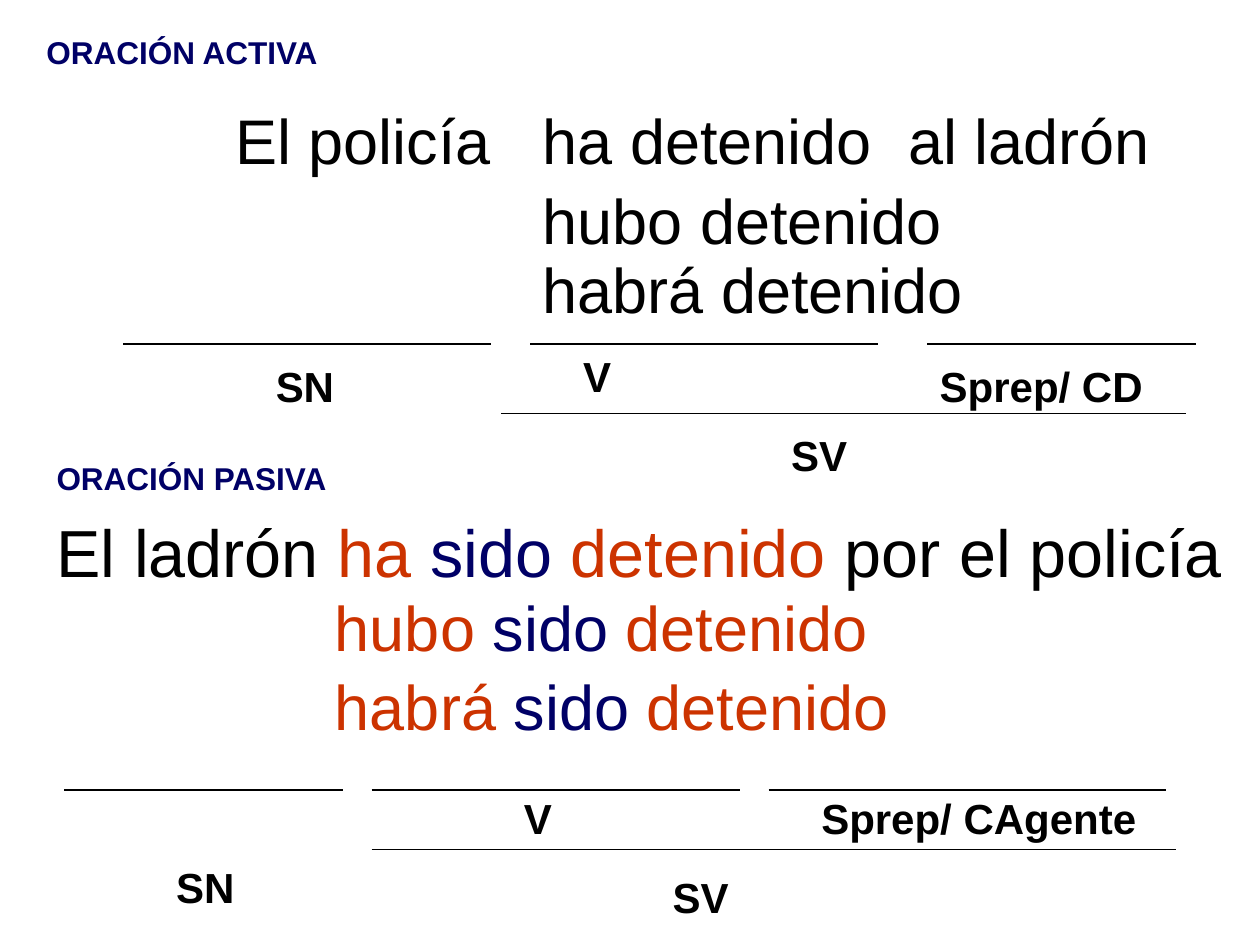
from lxml import etree
from pptx import Presentation
from pptx.dml.color import RGBColor
from pptx.enum.shapes import MSO_CONNECTOR as Conn
from pptx.oxml.ns import qn
from pptx.util import Inches, Pt

BLACK = RGBColor(0x00, 0x00, 0x00)
NAVY = RGBColor(0x00, 0x00, 0x66)
RUST = RGBColor(0xCC, 0x33, 0x00)
COLS, ROWS = 100, 75  # slide grid


def write(tf, runs, size=36, bold=False, font="Arial"):
    """Fill the first paragraph with (text, colour) runs."""
    p = tf.paragraphs[0]
    for text, color in runs:
        r = p.add_run()
        r.text = text
        r.font.name, r.font.size, r.font.bold = font, Pt(size), bold
        r.font.color.rgb = color
    return p


class Board:
    def __init__(self, prs):
        self.s = prs.slides.add_slide(prs.slide_layouts[6])
        self.col = prs.slide_width / COLS
        self.row = prs.slide_height / ROWS

    def x(self, cols):
        return round(cols * self.col)

    def y(self, rows):
        return round(rows * self.row)

    def text(self, x, y, w, h, runs, **fmt):
        sp = self.s.shapes.add_textbox(self.x(x), self.y(y), self.x(w), self.y(h))
        sp.text_frame.word_wrap = True
        return write(sp.text_frame, runs, **fmt)

    def heading(self, x, y, text):
        self.text(x, y, 29.9, 4, [(text, NAVY)], size=18, bold=True)

    def label(self, x, y, w, text):
        self.text(x, y, w, 5, [(text, BLACK)], size=24, bold=True)

    def sentence(self, x, y, w, *runs, h=7, size=36, tabs=()):
        p = self.text(x, y, w, h, runs, size=size)
        if tabs:
            tab_list = etree.SubElement(p._p.get_or_add_pPr(), qn("a:tabLst"))
            for pos in tabs:
                etree.SubElement(tab_list, qn("a:tab"), pos=str(self.x(pos)), algn="l")

    def rule(self, x1, x2, y):
        c = self.s.shapes.add_connector(
            Conn.STRAIGHT, self.x(x1), self.y(y), self.x(x2), self.y(y))
        c.line.color.rgb = BLACK
        c.line.width = Pt(0.75)
        etree.SubElement(c._element.spPr, qn("a:effectLst"))


def main():
    prs = Presentation()
    prs.slide_width, prs.slide_height = Inches(10), Inches(7.5)
    b = Board(prs)
    verb_x, passive_x = 42.1, 25.6

    # Active sentence and its verb variants
    b.heading(2.7, 2.1, "ORACIÓN ACTIVA")
    b.sentence(17.7, 7.6, 78, ("El policía\tha detenido\tal ladrón", BLACK),
               tabs=(verb_x - 17.7, 53.4))
    for y, aux in ((13.9, "hubo"), (19.4, "habrá")):
        b.sentence(verb_x, y, 40.2, (f"{aux} detenido", BLACK))

    # Passive sentence and its verb variants
    b.heading(3.5, 35.9, "ORACIÓN PASIVA")
    b.sentence(3.5, 40.1, 96.5, ("El ladrón ", BLACK), ("ha ", RUST), ("sido", NAVY),
               (" detenido", RUST), (" por el policía", BLACK), h=7.3, size=38)
    for y, aux in ((46.2, "hubo "), (52.5, "habrá ")):
        b.sentence(passive_x, y, 55.1, (aux, RUST), ("sido", NAVY), (" detenido", RUST))

    # Rules under the phrases: active, then passive
    for y, spans in ((27.3, ((9.8, 39), (42.1, 69.7), (73.6, 94.9))),
                     (32.8, ((39.8, 94.1),)),
                     (62.7, ((5.1, 27.2), (29.5, 58.7), (61, 92.5))),
                     (67.4, ((29.5, 93.3),))):
        for x1, x2 in spans:
            b.rule(x1, x2, y)

    # Phrase labels: active, then passive
    for x, y, w, text in ((20.9, 28.1, 7.1, "SN"), (45.3, 27.3, 5.5, "V"),
                          (73.6, 28.1, 19.7, "Sprep/ CD"), (61.8, 33.6, 7.1, "SV"),
                          (13, 67.9, 7.1, "SN"), (40.6, 62.4, 5.5, "V"),
                          (64.2, 62.4, 27.6, "Sprep/ CAgente"), (52.4, 68.7, 7.1, "SV")):
        b.label(x, y, w, text)

    prs.save("out.pptx")


if __name__ == "__main__":
    main()
